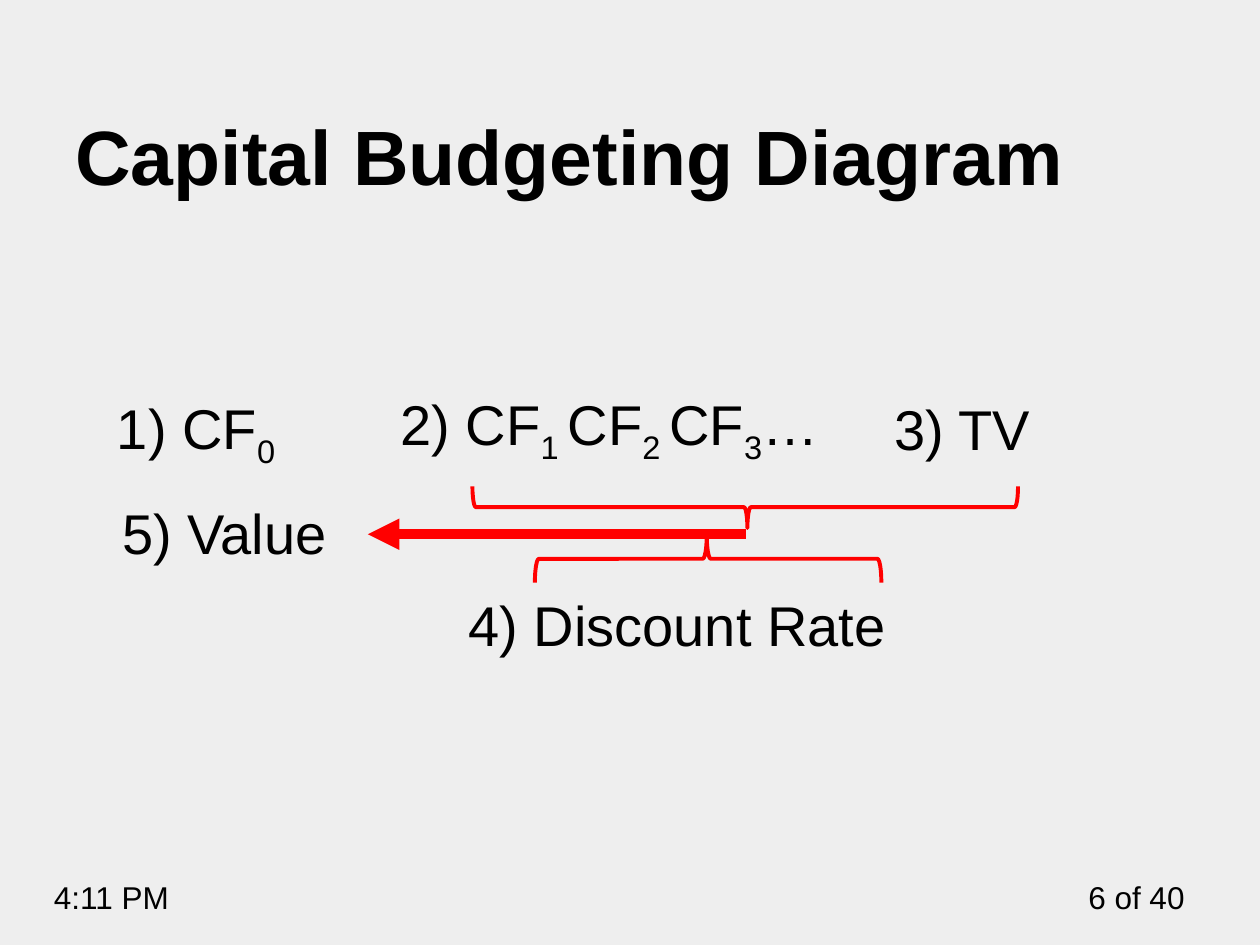
from lxml.etree import SubElement
from pptx import Presentation
from pptx.dml.color import RGBColor
from pptx.enum.shapes import MSO_CONNECTOR, MSO_SHAPE
from pptx.enum.text import MSO_ANCHOR, PP_ALIGN
from pptx.oxml.ns import qn
from pptx.util import Inches, Pt

COLORS = {"background": "EEEEEE", "text": "000000", "accent": "FF0000"}

deck = Presentation()
deck.slide_width, deck.slide_height = Inches(10), Inches(7.5)
page = deck.slides.add_slide(deck.slide_layouts[6])
page.background.fill.solid()
page.background.fill.fore_color.rgb = RGBColor.from_string(COLORS["background"])


def add_text(left, top, width, height, parts, size):
    box = page.shapes.add_textbox(Inches(left), Inches(top), Inches(width), Inches(height))
    box.text_frame.word_wrap = True
    para = box.text_frame.paragraphs[0]
    para.font.name = "Arial"
    para.font.size = Pt(size)
    para.font.color.rgb = RGBColor.from_string(COLORS["text"])
    for index, part in enumerate(parts):
        span = para.add_run()
        span.text = part
        if index % 2:
            span.font._element.set("baseline", "-25000")
    return box.text_frame


page_number = add_text(8.33, 6.92, 1.17, 0.4, ["6 of 40"], 18)
page_number.paragraphs[0].alignment = PP_ALIGN.RIGHT
add_text(0.33, 6.92, 1.58, 0.4, ["4:11 PM"], 18)

title = add_text(0.5, 0.39, 9, 1.25, ["Capital Budgeting Diagram"], 44)
title.vertical_anchor = MSO_ANCHOR.BOTTOM
title.paragraphs[0].font.bold = True

steps = [
    (0.83, 3.03, 2.25, ["1) CF", "0"]),
    (3.08, 3, 5.42, ["2) CF", "1 ", "CF", "2 ", "CF", "3", "…"]),
    (7, 3.04, 1.5, ["3) TV"]),
    (3.62, 4.6, 4.33, ["4) Discount Rate"]),
    (0.87, 3.87, 2.42, ["5) Value"]),
]
for left, top, width, parts in steps:
    frame = add_text(left, top, width, 0.52, parts, 32)
    frame.margin_top, frame.margin_bottom = Inches(0.09), 0

braces = [(5.75, 1.86, 0.33, 4.33, 270), (5.43, 3.06, 0.38, 2.75, 90)]
for left, top, width, height, rotation in braces:
    brace = page.shapes.add_shape(
        MSO_SHAPE.LEFT_BRACE, Inches(left), Inches(top), Inches(width), Inches(height)
    )
    brace.rotation = rotation
    brace.adjustments[0], brace.adjustments[1] = 0.083, 0.504
    brace.shadow.inherit = False
    brace.fill.background()
    brace.line.color.rgb = RGBColor.from_string(COLORS["accent"])
    brace.line.width = Pt(2.25)

arrow = page.shapes.add_connector(
    MSO_CONNECTOR.STRAIGHT, Inches(5.92), Inches(4.24), Inches(2.92), Inches(4.24)
)
arrow.line.color.rgb = RGBColor.from_string(COLORS["accent"])
arrow.line.width = Pt(6)
SubElement(arrow.line._get_or_add_ln(), qn("a:tailEnd"), type="triangle")
SubElement(arrow._element.spPr, qn("a:effectLst"))

deck.save("out.pptx")
